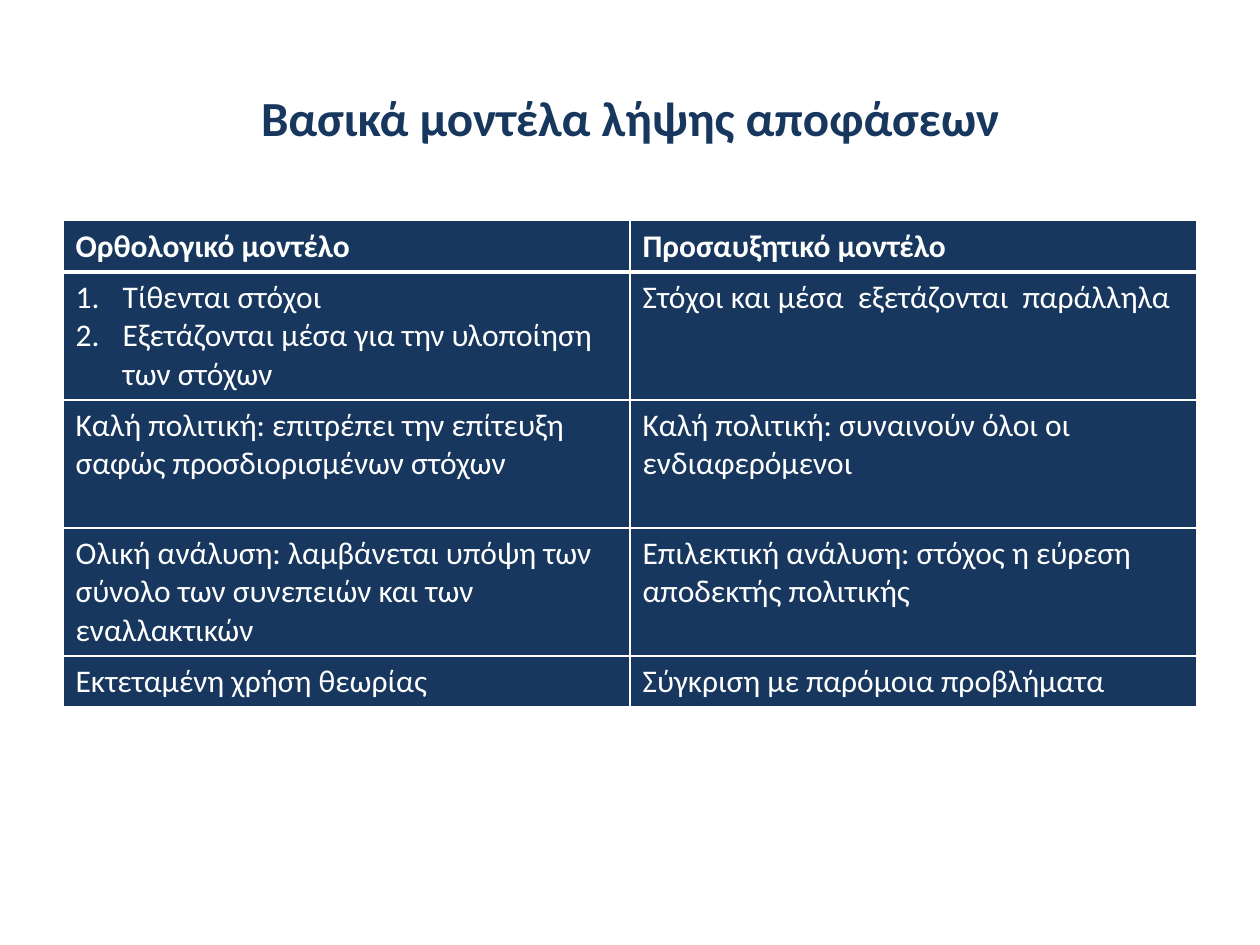
from lxml import etree
from pptx import Presentation
from pptx.dml.color import RGBColor
from pptx.enum import text
from pptx.oxml import ns
from pptx.util import Cm, Pt

NAVY, WHITE = "17375E", "FFFFFF"
FONT = "Calibri"
ROWS = [
    ("Ορθολογικό μοντέλο", "Προσαυξητικό μοντέλο"),
    (["Τίθενται στόχοι", "Εξετάζονται μέσα για την υλοποίηση των στόχων"],
     "Στόχοι και μέσα  εξετάζονται  παράλληλα"),
    ("Καλή πολιτική: επιτρέπει την επίτευξη σαφώς προσδιορισμένων στόχων",
     "Καλή πολιτική: συναινούν όλοι οι ενδιαφερόμενοι"),
    ("Ολική ανάλυση: λαμβάνεται υπόψη των σύνολο των συνεπειών και των εναλλακτικών",
     "Επιλεκτική ανάλυση: στόχος η εύρεση αποδεκτής πολιτικής"),
    ("Εκτεταμένη χρήση θεωρίας", "Σύγκριση με παρόμοια προβλήματα"),
]
SHORT_ROW, TALL_ROW = Cm(1.03), Cm(2.58)
ROW_HEIGHTS = [SHORT_ROW, TALL_ROW, TALL_ROW, TALL_ROW, SHORT_ROW]


def color(value):
    return RGBColor.from_string(value)


def style_runs(p, size, value, bold):
    for r in p.runs:
        r.font.name = FONT
        r.font.size = Pt(size)
        r.font.bold = bold
        r.font.color.rgb = color(value)


def number_paragraph(p):
    """Give the paragraph an automatic number and a hanging indent."""
    pPr = p._p.get_or_add_pPr()
    indent = Cm(0.95)
    pPr.set("marL", str(indent))
    pPr.set("indent", str(-indent))
    etree.SubElement(pPr, ns.qn("a:buFont"), typeface="+mj-lt")
    etree.SubElement(pPr, ns.qn("a:buAutoNum"), type="arabicPeriod")


def set_borders(cell, widths):
    """Draw white borders; widths holds points for left, right, top, bottom."""
    tcPr = cell._tc.get_or_add_tcPr()
    for side, width in zip("LRTB", widths):
        ln = etree.SubElement(tcPr, ns.qn(f"a:ln{side}"), w=str(Pt(width)))
        fill = etree.SubElement(ln, ns.qn("a:solidFill"))
        etree.SubElement(fill, ns.qn("a:srgbClr"), val=WHITE)


def fill_cell(cell, content, bold, top, bottom):
    set_borders(cell, (1, 1, top, bottom))
    cell.fill.solid()
    cell.fill.fore_color.rgb = color(NAVY)
    numbered = isinstance(content, list)
    cell.text_frame.text = "\n".join(content) if numbered else content
    for p in cell.text_frame.paragraphs:
        if numbered:
            number_paragraph(p)
        style_runs(p, 18, WHITE, bold)


def add_title(s, left, top, width, height):
    sp = s.shapes.title
    sp.left, sp.top, sp.width, sp.height = left, top, width, height
    tf = sp.text_frame
    tf.text = "Βασικά μοντέλα λήψης αποφάσεων"
    tf.vertical_anchor = text.MSO_ANCHOR.MIDDLE
    p = tf.paragraphs[0]
    p.alignment = text.PP_ALIGN.CENTER
    style_runs(p, 28, NAVY, True)


def add_comparison(s, left, top, width):
    table = s.shapes.add_table(len(ROWS), 2, left, top, width,
                               sum(ROW_HEIGHTS)).table
    table.horz_banding = False
    for i, (row, height) in enumerate(zip(ROWS, ROW_HEIGHTS)):
        table.rows[i].height = height
        for j, content in enumerate(row):
            fill_cell(table.cell(i, j), content, bold=i == 0,
                      top=3 if i == 1 else 1, bottom=3 if i == 0 else 1)


def main():
    prs = Presentation()
    prs.slide_width, prs.slide_height = Cm(25.4), Cm(19.05)
    s = prs.slides.add_slide(prs.slide_layouts[5])
    margin = Cm(1.27)
    width = prs.slide_width - 2 * margin
    add_title(s, margin, Cm(0.76), width, Cm(3.18))
    add_comparison(s, margin, Cm(4.45), width)
    prs.save("out.pptx")


if __name__ == "__main__":
    main()
